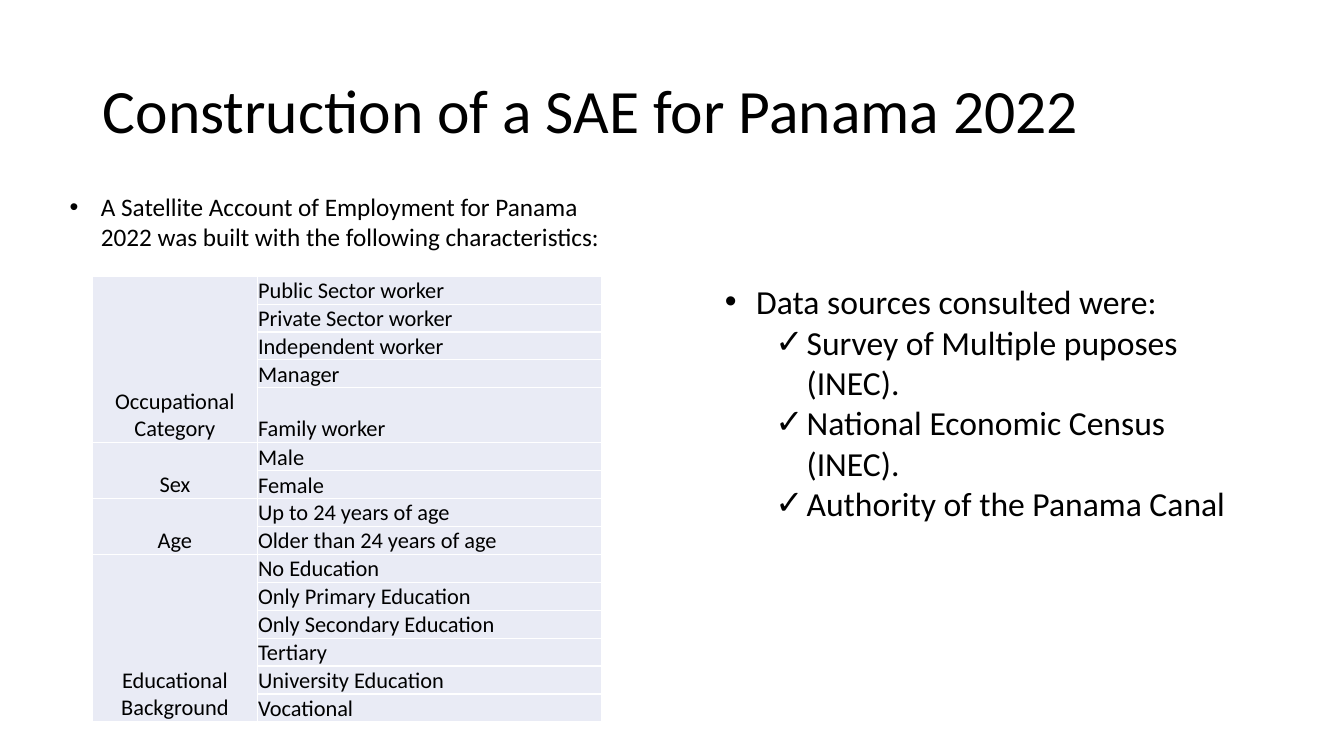
from dataclasses import dataclass
from lxml.etree import SubElement
from pptx import Presentation
from pptx.dml.color import RGBColor
from pptx.enum.text import MSO_ANCHOR, MSO_AUTO_SIZE, PP_ALIGN
from pptx.oxml.ns import qn
from pptx.util import Inches, Pt


@dataclass(frozen=True)
class Theme:
    font: str = "Calibri"
    ink: RGBColor = RGBColor(0, 0, 0)
    cell: RGBColor = RGBColor(0xE9, 0xEB, 0xF5)
    title: int = 44
    list: int = 24
    intro: int = 18
    table: int = 16


theme = Theme()


def write(para, text, size):
    run = para.add_run()
    run.text = text
    run.font.name = theme.font
    run.font.size = Pt(size)
    run.font.color.rgb = theme.ink


def place(shape, left, top, width, height):
    shape.left, shape.top = Inches(left), Inches(top)
    shape.width, shape.height = Inches(width), Inches(height)


deck = Presentation()
deck.slide_width, deck.slide_height = Inches(13.33), Inches(7.5)
slide = deck.slides.add_slide(deck.slide_layouts[3])
title, left, right = slide.placeholders

# Title
place(title, 0.92, 0.4, 11.5, 1.45)
title.text_frame.vertical_anchor = MSO_ANCHOR.MIDDLE
head = title.text_frame.paragraphs[0]
head.alignment = PP_ALIGN.LEFT
head.line_spacing = 0.9
write(head, "Construction of a SAE for Panama 2022", theme.title)

# Bulleted lists: level and text of each item
intro = [(0, "A Satellite Account of Employment for Panama 2022 "
             "was built with the following characteristics:")]
sources = [
    (0, "Data sources consulted were:"),
    (1, "Survey of Multiple puposes (INEC)."),
    (1, "National Economic Census (INEC)."),
    (1, "Authority of the Panama Canal"),
]
place(left, 0.59, 1.85, 5.52, 0.71)
place(right, 7.09, 2.74, 5.52, 2.52)
for box, items, size in ((left, intro, theme.intro), (right, sources, theme.list)):
    frame = box.text_frame
    frame.auto_size = MSO_AUTO_SIZE.SHAPE_TO_FIT_TEXT
    for i, (level, text) in enumerate(items):
        para = frame.add_paragraph() if i else frame.paragraphs[0]
        para.level = level
        para.space_before = Pt(0)
        props = para._p.get_or_add_pPr()
        props.set("marL", str(Inches(0.31 + 0.5 * level)))
        props.set("indent", str(Inches(-0.31)))
        SubElement(props, qn("a:buFont"), typeface="Arial")
        SubElement(props, qn("a:buChar"), char="•✓"[level])
        write(para, text, size)

# Table of characteristics
groups = {
    "Occupational Category": ["Public Sector worker", "Private Sector worker",
                              "Independent worker", "Manager", "Family worker"],
    "Sex": ["Male", "Female"],
    "Age": ["Up to 24 years of age", "Older than 24 years of age"],
    "Educational Background": ["No Education", "Only Primary Education",
                               "Only Secondary Education", "Tertiary",
                               "University Education", "Vocational"],
}
count = sum(len(names) for names in groups.values())
step = 4.1 / count
grid = slide.shapes.add_table(count, 2, Inches(0.92), Inches(2.74),
                              Inches(5.05), Inches(4.1)).table
grid.first_row = grid.horz_banding = False
grid.columns[0].width, grid.columns[1].width = Inches(1.63), Inches(3.42)
for cell in grid.iter_cells():
    cell.fill.solid()
    cell.fill.fore_color.rgb = theme.cell
    cell.vertical_anchor = MSO_ANCHOR.BOTTOM
    cell.margin_left = cell.margin_right = cell.margin_top = Inches(0.01)
    cell.margin_bottom = 0

row = 0
for group, names in groups.items():
    label = grid.cell(row, 0)
    label.merge(grid.cell(row + len(names) - 1, 0))
    para = label.text_frame.paragraphs[0]
    para.alignment = PP_ALIGN.CENTER
    write(para, group, theme.table)
    for name in names:
        # The family row is two lines high
        lines = 2 if name == "Family worker" else 1
        grid.rows[row].height = Inches(step * lines)
        write(grid.cell(row, 1).text_frame.paragraphs[0], name, theme.table)
        row += 1

deck.save("out.pptx")
